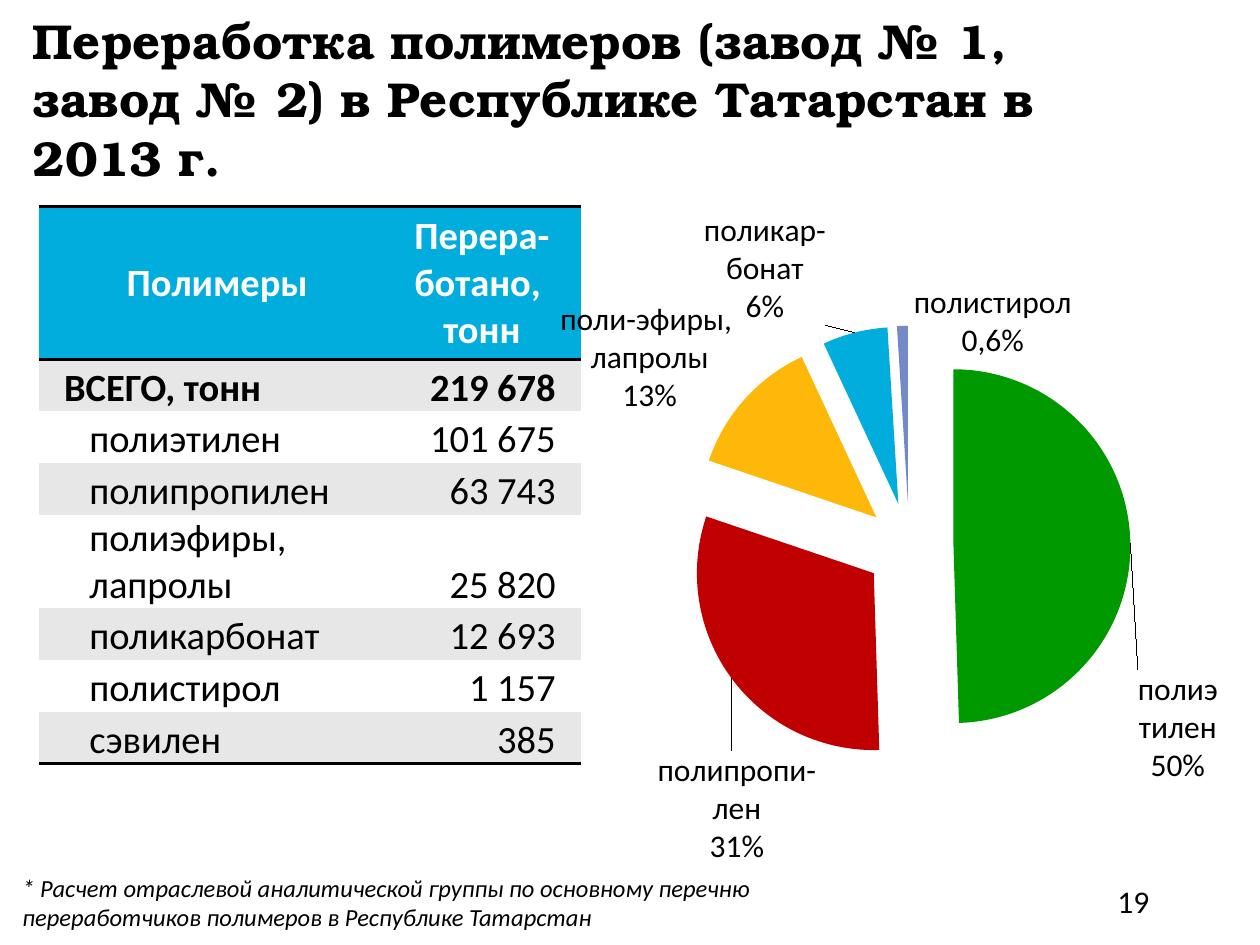
from lxml import etree
from pptx import Presentation
from pptx.chart.data import CategoryChartData
from pptx.dml.color import RGBColor
from pptx.enum import chart as ch, text as tx
from pptx.oxml import parse_xml
from pptx.oxml.ns import nsdecls, qn
from pptx.util import Inches, Pt

BLACK = RGBColor(0, 0, 0)
WHITE = RGBColor(255, 255, 255)
BLUE = RGBColor(0x00, 0xAD, 0xDC)
GRAY = RGBColor(0xE7, 0xE7, 0xE7)
GREEN = RGBColor(0x00, 0x99, 0x00)
RED = RGBColor(0xC0, 0x00, 0x00)
YELLOW = RGBColor(0xFE, 0xB8, 0x0A)
VIOLET = RGBColor(0x73, 0x8A, 0xC8)
BODY_FONT = "Calibri"
TITLE_FONT = "TeX Gyre Bonum"
NO_STYLE = "{2D5ABB26-0587-4C30-8999-92F81FD0307C}"

TITLE = "Переработка полимеров (завод № 1, \vзавод № 2) в Республике Татарстан в 2013 г."
FOOTNOTE = ("* Расчет отраслевой аналитической группы по основному перечню \v"
            "переработчиков полимеров в Республике Татарстан")
PAGE_NUMBER = "19"
ROWS = [
    ("Полимеры", "Перера-ботано, \vтонн"),
    ("ВСЕГО, тонн", "219 678"),
    ("полиэтилен", "101 675"),
    ("полипропилен", "63 743"),
    ("полиэфиры,\vлапролы", "25 820"),
    ("поликарбонат", "12 693"),
    ("полистирол", "1 157"),
    ("сэвилен", "385"),
]
COLUMN_WIDTHS = (2.73, 1.57)
# category, share, colour, label, label shift as a fraction of the chart
SLICES = [
    ("полиэтилен", 50, GREEN, "полиэтилен\n50%", (0, 0.27)),
    ("полипропилен", 31, RED, "полипропи-лен\n31%", (0.1, 0.1)),
    ("полиэфиры, \nлапролы", 13, YELLOW, "поли-эфиры, \nлапролы\n13%", (0, 0.03)),
    ("поликарбонат", 6, BLUE, "поликар-бонат\n6%", (-0.03, 0)),
    ("полистирол", 1, VIOLET, "полистирол\n0,6%", (0.1, 0.06)),
]
PLOT_AREA = {"x": 0.4, "y": 0.19, "w": 0.49, "h": 0.65}


def style(font, size, color=BLACK, bold=False, italic=False, name=BODY_FONT):
    font.name, font.size, font.bold, font.italic = name, Pt(size), bold, italic
    font.color.rgb = color


def add_text(slide, box, content, size, align=tx.PP_ALIGN.LEFT, italic=False):
    frame = slide.shapes.add_textbox(*map(Inches, box)).text_frame
    frame.word_wrap = True
    frame.text = content
    frame.paragraphs[0].alignment = align
    style(frame.paragraphs[0].font, size, italic=italic)


def add_border(cell, *sides):
    """Draw 2 pt black lines on the given sides, ordered as T, B."""
    for position, side in enumerate(sides):
        cell._tc.get_or_add_tcPr().insert(position, parse_xml(
            f'<a:ln{side} {nsdecls("a")} w="25400"><a:solidFill>'
            f'<a:srgbClr val="{BLACK}"/></a:solidFill></a:ln{side}>'))


def layout_xml(values, inner=False):
    """Manual layout of the plot area or of a label."""
    target = '<c:layoutTarget val="inner"/>' if inner else ""
    modes = '<c:xMode val="edge"/><c:yMode val="edge"/>' if inner else ""
    numbers = "".join(f'<c:{key} val="{value}"/>' for key, value in values.items())
    return parse_xml(f'<c:layout {nsdecls("c")}><c:manualLayout>{target}{modes}'
                     f'{numbers}</c:manualLayout></c:layout>')


def add_title(slide):
    title = slide.shapes.title
    title.left, title.top, title.width, title.height = map(Inches, (0.16, 0.08, 9.06, 1.08))
    frame = title.text_frame
    frame.text = TITLE
    frame.word_wrap = True
    frame.auto_size = tx.MSO_AUTO_SIZE.NONE
    frame.vertical_anchor = tx.MSO_ANCHOR.TOP
    frame.margin_top = 0
    frame.paragraphs[0].alignment = tx.PP_ALIGN.LEFT
    for run in frame.paragraphs[0].runs:
        style(run.font, 28, bold=True, name=TITLE_FONT)


def add_polymer_table(slide):
    frame = slide.shapes.add_table(len(ROWS), 2, Inches(0.31), Inches(1.64),
                                   Inches(sum(COLUMN_WIDTHS)), Inches(0.41 * len(ROWS)))
    table = frame.table
    table._tbl.tblPr.find(qn("a:tableStyleId")).text = NO_STYLE
    for column, width in zip(table.columns, COLUMN_WIDTHS):
        column.width = Inches(width)
    for r, row in enumerate(ROWS):
        for c, content in enumerate(row):
            cell = table.cell(r, c)
            cell.text = content
            header = r == 0
            cell.fill.solid()
            cell.fill.fore_color.rgb = BLUE if header else GRAY if r % 2 else WHITE
            paragraph = cell.text_frame.paragraphs[0]
            if header:
                cell.vertical_anchor = tx.MSO_ANCHOR.MIDDLE
                paragraph.alignment = tx.PP_ALIGN.CENTER
                cell.margin_left = Inches(0.1 if c else 0.2)
                add_border(cell, "T", "B")
            else:
                cell.vertical_anchor = tx.MSO_ANCHOR.BOTTOM
                cell.margin_top = cell.margin_bottom = 0
                cell.margin_left = Inches(0 if c else 0.2)
                cell.margin_right = Inches(0.2 if c else 0)
                paragraph.alignment = tx.PP_ALIGN.RIGHT if c else tx.PP_ALIGN.LEFT
                if r > 1 and c == 0:
                    paragraph._p.get_or_add_pPr().set("marL", str(Inches(0.2)))
            if r == len(ROWS) - 1:
                add_border(cell, "B")
            for run in paragraph.runs:
                style(run.font, 22, WHITE if header else BLACK, bold=r < 2)


def add_share_chart(slide):
    data = CategoryChartData()
    data.categories = [category for category, *_ in SLICES]
    data.add_series("Series 1", [share for _, share, *_ in SLICES])
    chart = slide.shapes.add_chart(ch.XL_CHART_TYPE.PIE, Inches(2.58), Inches(1.56),
                                   Inches(7.19), Inches(5.4), data).chart
    chart.has_legend = chart.has_title = False
    style(chart.font, 18)

    plot_area = chart._chartSpace.chart.plotArea
    for old in plot_area.findall(qn("c:layout")):
        plot_area.remove(old)
    plot_area.insert(0, layout_xml(PLOT_AREA, inner=True))

    plot = chart.plots[0]
    plot.vary_by_categories = True
    series = plot.series[0]
    for i, (_, _, color, label, (dx, dy)) in enumerate(SLICES):
        point = series.points[i]
        point.format.fill.solid()
        point.format.fill.fore_color.rgb = color
        data_label = point.data_label
        data_label.text_frame.text = label
        for paragraph in data_label.text_frame.paragraphs:
            for run in paragraph.runs:
                style(run.font, 18)
        data_label.position = ch.XL_LABEL_POSITION.OUTSIDE_END
        element = data_label._dLbl
        element.find(qn("c:idx")).addnext(layout_xml({"x": dx, "y": dy}))
    labels = series.data_labels
    labels.show_percentage = labels.show_category_name = True
    labels.show_value = False
    labels.position = ch.XL_LABEL_POSITION.OUTSIDE_END
    style(labels.font, 18)
    explosion = etree.Element(qn("c:explosion"), val="25")
    series._element.find(qn("c:dPt")).addprevious(explosion)


def main():
    deck = Presentation()
    deck.slide_width, deck.slide_height = Inches(10), Inches(7.5)
    slide = deck.slides.add_slide(deck.slide_layouts[5])
    add_title(slide)
    add_polymer_table(slide)
    add_share_chart(slide)
    add_text(slide, (0.08, 6.88, 10, 0.57), FOOTNOTE, 14, italic=True)
    add_text(slide, (7.05, 6.95, 2.17, 0.4), PAGE_NUMBER, 18, tx.PP_ALIGN.RIGHT)
    deck.save("out.pptx")


if __name__ == "__main__":
    main()
